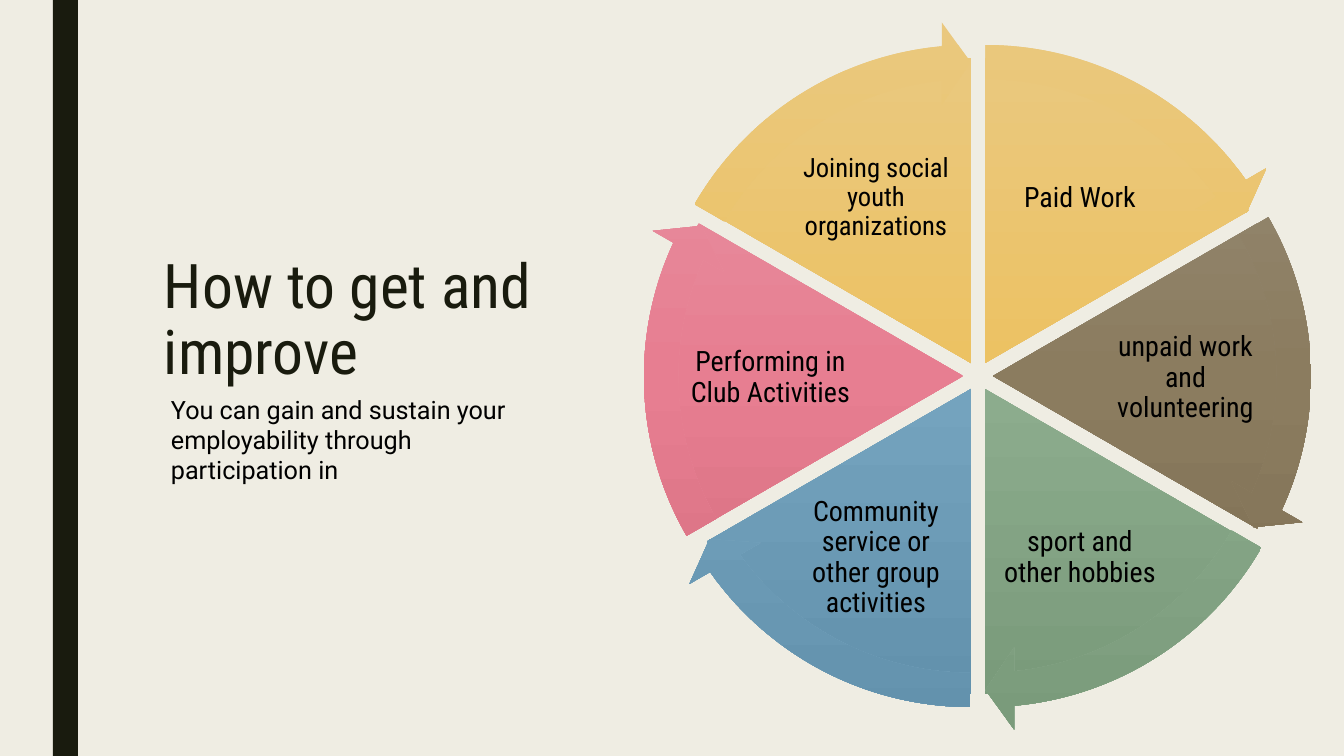
import math

import pptx
import pptx.dml.color
import pptx.enum.shapes
import pptx.enum.text
import pptx.oxml
import pptx.oxml.ns
import pptx.util

RGBColor = pptx.dml.color.RGBColor
MSO_SHAPE = pptx.enum.shapes.MSO_SHAPE
MSO_ANCHOR = pptx.enum.text.MSO_ANCHOR
PP_ALIGN = pptx.enum.text.PP_ALIGN

EMU_PER_PX = 914400 / 100.8
CREAM = RGBColor(0xEF, 0xED, 0xE3)
DARK = RGBColor(0x19, 0x1B, 0x0E)
BLACK = RGBColor(0, 0, 0)


def shades(*codes):
    return [RGBColor.from_string(code) for code in codes]


GOLD = shades("EAC87E", "ECC263", "D9B051")
BROWN = shades("978B76", "8B7C5F", "7D6E53")
GREEN = shades("9BB59B", "8CAC8D", "7A9B7B")
BLUE = shades("88ADC3", "74A3BE", "6392AD")
PINK = shades("E793A2", "E77E91", "D36B7D")

SECTORS = [
    ("Paid Work", GOLD, 20, (1000, 136, 160, 124)),
    ("unpaid work and volunteering", BROWN, 20, (1102, 318, 167, 120)),
    ("sport and other hobbies", GREEN, 20, (1000, 496, 160, 124)),
    ("Community service or other group activities", BLUE, 20, (796, 496, 160, 124)),
    ("Performing in Club Activities", PINK, 20, (687, 318, 167, 120)),
    ("Joining social youth organizations", GOLD, 19, (796, 136, 160, 124)),
]
WHEEL_CENTER = (978, 376)
WHEEL_GAP = 15
PIE_SIZE = 610
ARROW_SIZE = 685
FULL_TURN = 216
SECTOR_TURN = FULL_TURN // len(SECTORS)
FIRST_START = 162
ARROW_TURN = 32.72


def px(length):
    return pptx.util.Emu(round(length * EMU_PER_PX))


def add_shape(page, kind, box):
    shape = page.shapes.add_shape(kind, *map(px, box))
    shape.shadow.inherit = False
    shape.line.fill.background()
    return shape


def fill_gradient(shape, colors):
    shape.fill.gradient()
    shape.fill.gradient_angle = 270
    stops = shape.fill._fill._gradFill.find(pptx.oxml.ns.qn("a:gsLst"))
    for stop in list(stops):
        stops.remove(stop)
    for position, color in zip((0, 50000, 100000), colors):
        stops.append(pptx.oxml.parse_xml(
            f'<a:gs {pptx.oxml.ns.nsdecls("a")} pos="{position}">'
            f'<a:srgbClr val="{color}"/></a:gs>'))


def add_text(page, text, box, size, font="Roboto Condensed", color=BLACK):
    shape = page.shapes.add_textbox(*map(px, box))
    frame = shape.text_frame
    frame.word_wrap = True
    para = frame.paragraphs[0]
    para.text = text
    para.font.name = font
    para.font.size = pptx.util.Pt(size)
    para.font.color.rgb = color
    return frame


def add_label(page, text, box, size):
    frame = add_text(page, text, box, size)
    frame.vertical_anchor = MSO_ANCHOR.MIDDLE
    frame.margin_left = frame.margin_right = px(3)
    frame.margin_top = frame.margin_bottom = px(3)
    frame.paragraphs[0].alignment = PP_ALIGN.CENTER
    frame.paragraphs[0].line_spacing = 0.9


def add_wheel_part(page, kind, index, size, adjustments, colors):
    angle = math.radians(60 * index - 60)
    left = WHEEL_CENTER[0] + WHEEL_GAP * math.cos(angle) - size / 2
    top = WHEEL_CENTER[1] + WHEEL_GAP * math.sin(angle) - size / 2
    shape = add_shape(page, kind, (round(left), round(top), size, size))
    for position, value in enumerate(adjustments):
        shape.adjustments[position] = value
    fill_gradient(shape, colors)


def add_wheel(page):
    starts = [(FIRST_START + SECTOR_TURN * index) % FULL_TURN
              for index in range(len(SECTORS))]
    for index, (text, colors, size, box) in enumerate(SECTORS):
        end = (starts[index] + SECTOR_TURN) % FULL_TURN
        add_wheel_part(page, MSO_SHAPE.PIE, index, PIE_SIZE,
                       (starts[index], end), colors)
        add_label(page, text, box, size)
    for index, (text, colors, size, box) in enumerate(SECTORS):
        end = (starts[index] + ARROW_TURN) % FULL_TURN
        add_wheel_part(page, MSO_SHAPE.CIRCULAR_ARROW, index, ARROW_SIZE,
                       (0.05, 3.28, end, starts[index], 0.06), colors)


def main():
    deck = pptx.Presentation()
    deck.slide_width, deck.slide_height = px(1344), px(756)
    page = deck.slides.add_slide(deck.slide_layouts[6])
    page.background.fill.solid()
    page.background.fill.fore_color.rgb = CREAM

    bar = add_shape(page, MSO_SHAPE.RECTANGLE, (53, 0, 25, 756))
    bar.fill.solid()
    bar.fill.fore_color.rgb = DARK

    title = add_text(page, "How to get and improve", (154, 251, 389, 163), 44,
                     color=DARK)
    title.paragraphs[0].line_spacing = 0.89
    add_wheel(page)
    add_text(page, "You can gain and sustain your employability through "
             "participation in", (161, 389, 371, 102), 18, font="Roboto")
    deck.save("out.pptx")


if __name__ == "__main__":
    main()
